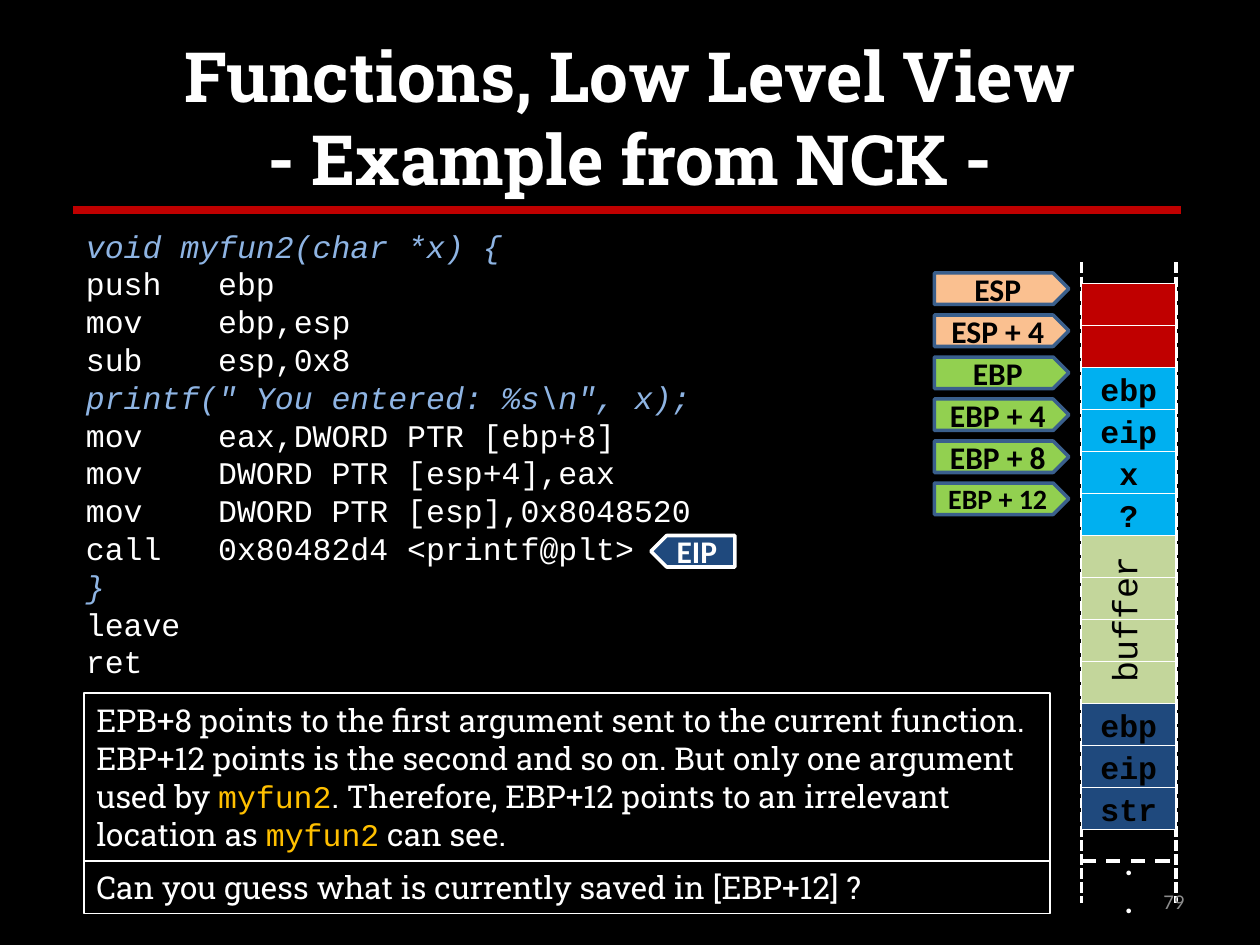
from lxml.etree import SubElement
from pptx import Presentation
from pptx.dml.color import RGBColor
from pptx.enum.dml import MSO_LINE
from pptx.enum.shapes import MSO_CONNECTOR, MSO_SHAPE
from pptx.enum.text import MSO_ANCHOR, PP_ALIGN
from pptx.oxml.ns import qn
from pptx.util import Pt

SCALE = 7620
BLACK = RGBColor(0, 0, 0)
WHITE = RGBColor(255, 255, 255)
RED = RGBColor(0xC0, 0, 0)
SKY = RGBColor(0, 0xB0, 0xF0)
NAVY = RGBColor(0x1F, 0x49, 0x7D)
OLIVE = RGBColor(0xC3, 0xD6, 0x9B)
GREEN = RGBColor(0x92, 0xD0, 0x50)
PEACH = RGBColor(0xFA, 0xC0, 0x90)
STEEL = RGBColor(0x3A, 0x5F, 0x8C)
PALE = RGBColor(0x8E, 0xB4, 0xE3)
GOLD = RGBColor(0xFF, 0xC0, 0)
GRAY = RGBColor(0x8C, 0x8C, 0x8C)
MONO, SANS, SLAB = "Courier New", "Calibri", "Roboto Slab"

CODE = [
    ("void myfun2(char *x) {",),
    ("push", "ebp"),
    ("mov", "ebp,esp"),
    ("sub", "esp,0x8"),
    ('printf(" You entered: %s\\n", x);',),
    ("mov", "eax,DWORD PTR [ebp+8]"),
    ("mov", "DWORD PTR [esp+4],eax"),
    ("mov", "DWORD PTR [esp],0x8048520"),
    ("call", "0x80482d4 <printf@plt>"),
    ("}",),
    ("leave", ""),
    ("ret", ""),
]
CELLS = (
    [("", RED)] * 2
    + [(name, SKY) for name in ("ebp", "eip", "x", "?")]
    + [("", OLIVE)] * 4
    + [(name, NAVY) for name in ("ebp", "eip", "str")]
)
TAGS = [
    ("ESP", PEACH, 18),
    ("ESP + 4", PEACH, 18),
    ("EBP", GREEN, 18),
    ("EBP + 4", GREEN, 18),
    ("EBP + 8", GREEN, 18),
    ("EBP + 12", GREEN, 16),
]
NOTE = [
    ("EPB+8 points to the first argument sent to the current function. "
     "EBP+12 points is the second and so on. But only one argument used by ", SLAB, WHITE),
    ("myfun2", MONO, GOLD),
    (". Therefore, EBP+12 points to an irrelevant location as ", SLAB, WHITE),
    ("myfun2", MONO, GOLD),
    (" can see.", SLAB, WHITE),
]
ASK = [("Can you guess what is currently saved in [EBP+12] ?", SLAB, WHITE)]


def px(*nums):
    """Turn px lengths into EMU."""
    return [num * SCALE for num in nums]


def add_run(para, text, font, size, color, bold=False, italic=False):
    """Add one styled run."""
    run = para.add_run()
    run.text = text
    run.font.name, run.font.size = font, Pt(size)
    run.font.bold, run.font.italic = bold, italic
    run.font.color.rgb = color


def add_line(slide, ends, color, width, dash=None):
    """Draw a straight line without a shadow."""
    line = slide.shapes.add_connector(MSO_CONNECTOR.STRAIGHT, *px(*ends))
    line.line.color.rgb, line.line.width = color, Pt(width)
    if dash:
        line.line.dash_style = dash
    SubElement(line.element.spPr, qn("a:effectLst"))


def add_block(slide, kind, box, fill, edge, width):
    """Draw a preset shape, hollow when fill is None."""
    shape = slide.shapes.add_shape(kind, *px(*box))
    shape.shadow.inherit = False
    if fill is None:
        shape.fill.background()
    else:
        shape.fill.solid()
        shape.fill.fore_color.rgb = fill
    shape.line.color.rgb, shape.line.width = edge, Pt(width)
    shape.text_frame.vertical_anchor = MSO_ANCHOR.MIDDLE
    return shape


def add_label(shape, text, font, size, color):
    """Centre a bold label in a shape, with no insets."""
    frame = shape.text_frame
    frame.word_wrap = False
    frame.margin_left = frame.margin_right = 0
    frame.margin_top = frame.margin_bottom = 0
    para = frame.paragraphs[0]
    para.alignment = PP_ALIGN.CENTER
    add_run(para, text, font, size, color, bold=True)


def add_text(slide, box, lines, font, size, color, align, bold=False):
    """Add a middle-anchored text box with one paragraph a line."""
    shape = slide.shapes.add_textbox(*px(*box))
    frame = shape.text_frame
    frame.word_wrap = True
    frame.vertical_anchor = MSO_ANCHOR.MIDDLE
    for num, text in enumerate(lines):
        para = frame.add_paragraph() if num else frame.paragraphs[0]
        para.alignment = align
        add_run(para, text, font, size, color, bold)
    return shape


def add_title(slide, first, second):
    """Place and fill the title."""
    title = slide.shapes.title
    title.left, title.top, title.width, title.height = px(60, 36, 1080, 150)
    title.text_frame.vertical_anchor = MSO_ANCHOR.MIDDLE
    para = title.text_frame.paragraphs[0]
    para.alignment = PP_ALIGN.CENTER
    para.line_spacing = Pt(47.5)
    add_run(para, first, SLAB, 39.6, WHITE, bold=True)
    para.add_line_break()
    add_run(para, second, SLAB, 39.6, WHITE, bold=True)


def add_code(slide):
    """List the assembly, with source lines in pale italics."""
    frame = slide.shapes.add_textbox(*px(70, 210, 600, 449)).text_frame
    frame.word_wrap = True
    for num, parts in enumerate(CODE):
        para = frame.add_paragraph() if num else frame.paragraphs[0]
        para.line_spacing = Pt(21.6)
        if len(parts) == 1:
            add_run(para, parts[0], MONO, 18, PALE, italic=True)
        else:
            text = f"{parts[0]:<7}{parts[1]}".rstrip()
            add_run(para, text, MONO, 18, WHITE)


def add_stack(slide):
    """Draw the stack cells and the register tags beside them."""
    for left in (1030, 1120):
        add_line(slide, (left, 250, left, 860), WHITE, 2, MSO_LINE.SQUARE_DOT)
    add_text(slide, (1030, 810, 90, 60), "..", SANS, 18, WHITE, PP_ALIGN.CENTER, True)
    add_line(slide, (1030, 820, 1120, 820), WHITE, 2, MSO_LINE.DASH)
    for num, (name, fill) in enumerate(CELLS):
        box = (1030, 270 + 40 * num, 90, 40)
        cell = add_block(slide, MSO_SHAPE.RECTANGLE, box, fill, WHITE, 1)
        if name:
            add_label(cell, name, MONO, 18, BLACK)
    for num, (name, fill, size) in enumerate(TAGS):
        box = (890, 260 + 40 * num, 128, 30)
        tag = add_block(slide, MSO_SHAPE.PENTAGON, box, fill, STEEL, 2)
        add_label(tag, name, SANS, size, BLACK)
    buffer = add_text(slide, (990, 560, 160, 60), ["buffer"], MONO, 20, BLACK, PP_ALIGN.CENTER)
    buffer.rotation = 270


def add_note(slide, box, runs):
    """Draw a framed note of mixed runs."""
    shape = add_block(slide, MSO_SHAPE.RECTANGLE, box, None, WHITE, 1)
    shape.text_frame.word_wrap = True
    para = shape.text_frame.paragraphs[0]
    para.alignment = PP_ALIGN.LEFT
    para.line_spacing = Pt(21.6)
    for text, font, color in runs:
        add_run(para, text, font, 18, color)


def main():
    """Build and save the slide."""
    deck = Presentation()
    deck.slide_width, deck.slide_height = px(1200, 900)
    slide = deck.slides.add_slide(deck.slide_layouts[5])
    slide.background.fill.solid()
    slide.background.fill.fore_color.rgb = BLACK
    add_title(slide, "Functions, Low Level View", "- Example from NCK -")
    add_line(slide, (70, 200, 1125, 200), RED, 5)
    add_code(slide)
    add_stack(slide)
    add_note(slide, (80, 660, 920, 160), NOTE)
    add_note(slide, (80, 820, 920, 50), ASK)
    mark = add_block(slide, MSO_SHAPE.PENTAGON, (620, 510, 80, 30), NAVY, WHITE, 2)
    mark.element.spPr.get_or_add_xfrm().set("flipH", "1")
    add_label(mark, "EIP", SANS, 18, WHITE)
    add_text(slide, (860, 834, 280, 48), ["79"], SANS, 12, GRAY, PP_ALIGN.RIGHT)
    deck.save("out.pptx")


if __name__ == "__main__":
    main()
